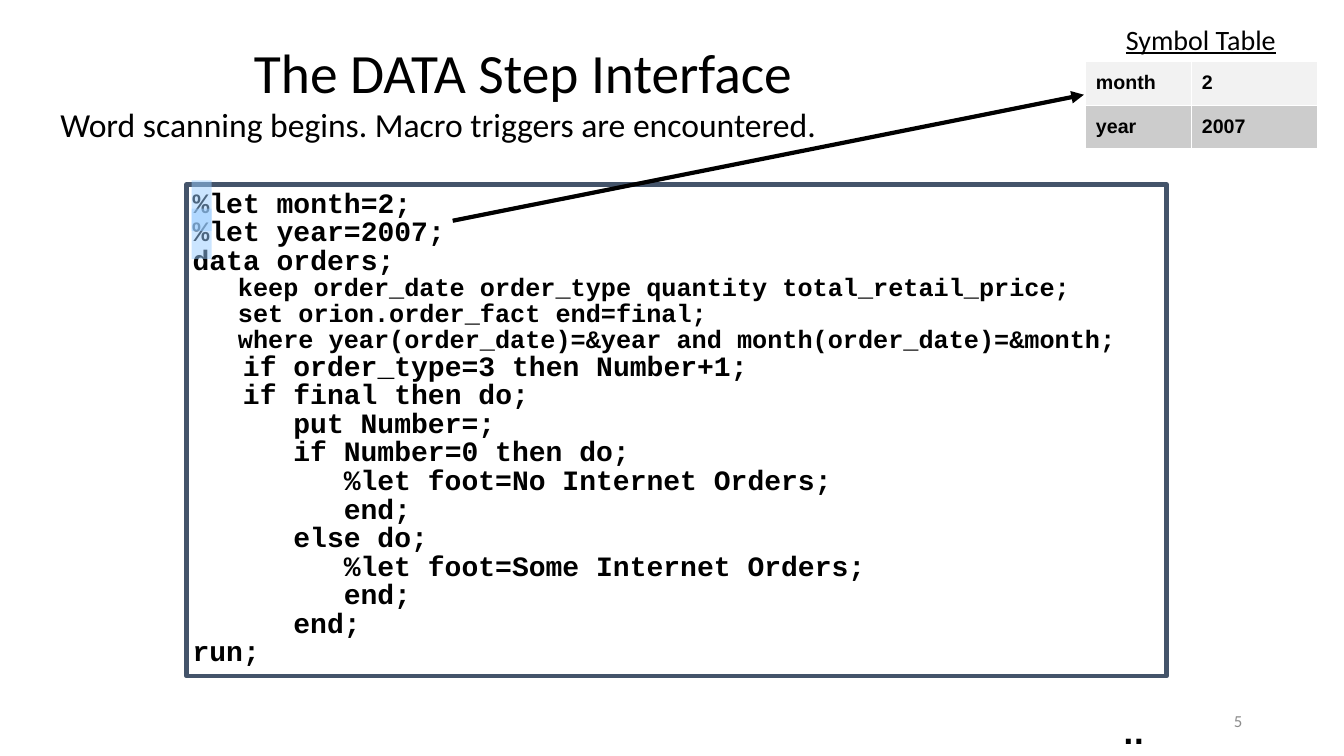
from dataclasses import dataclass

from lxml.etree import SubElement
from pptx import Presentation
from pptx.dml.color import RGBColor
from pptx.enum.shapes import MSO_CONNECTOR, MSO_SHAPE
from pptx.enum.text import MSO_ANCHOR, MSO_AUTO_SIZE, PP_ALIGN
from pptx.oxml.ns import qn
from pptx.util import Inches, Pt

COLORS = {
    "black": "000000",
    "white": "FFFFFF",
    "page_number": "8C8C8C",
    "frame": "44546A",
    "highlight": "99CCFF",
    "light_row": "F2F2F2",
    "dark_row": "CCCCCC",
}
COURIER_ADVANCE = 0.6  # character width as a share of the font size


@dataclass
class Label:
    text: str
    left: float
    top: float
    width: float
    height: float
    size: float
    font: str = "Calibri"
    color: str = "black"
    bold: bool = False
    underline: bool = False
    align: PP_ALIGN = PP_ALIGN.LEFT
    anchor: MSO_ANCHOR = MSO_ANCHOR.TOP
    wrap: bool = True
    line_spacing: float = 1.0


@dataclass
class CodeLine:
    text: str
    indent: int = 0
    size: int = 20


LABELS = [
    Label("The DATA Step Interface", 2.42, 0.5, 7.54, 0.5, 39.6,
          anchor=MSO_ANCHOR.MIDDLE, line_spacing=0.9),
    Label("Word scanning begins. Macro triggers are encountered.",
          0.5, 0.98, 8.73, 0.5, 24),
    Label("Symbol Table", 10.75, 0.17, 2.32, 0.43, 20,
          underline=True, align=PP_ALIGN.CENTER),
    Label("5", 9.42, 6.95, 3, 0.4, 12, color="page_number",
          align=PP_ALIGN.RIGHT, anchor=MSO_ANCHOR.MIDDLE),
    Label("...", 11.04, 7.06, 0.5, 0.43, 20, font="DejaVu Sans",
          bold=True, wrap=False),
]

CODE = [
    CodeLine("%let month=2;"),
    CodeLine("%let year=2007;"),
    CodeLine("data orders;"),
    CodeLine("keep order_date order_type quantity total_retail_price;", 3, 18),
    CodeLine("set orion.order_fact end=final;", 3, 18),
    CodeLine("where year(order_date)=&year and month(order_date)=&month;", 3, 18),
    CodeLine("if order_type=3 then Number+1;", 3),
    CodeLine("if final then do;", 3),
    CodeLine("put Number=;", 6),
    CodeLine("if Number=0 then do;", 6),
    CodeLine("%let foot=No Internet Orders;", 9),
    CodeLine("end;", 9),
    CodeLine("else do;", 6),
    CodeLine("%let foot=Some Internet Orders;", 9),
    CodeLine("end;", 9),
    CodeLine("end;", 6),
    CodeLine("run;"),
]

SYMBOLS = [("month", "2"), ("year", "2007")]
HIGHLIGHT_TOPS = [1.79, 2.07]


def rgb(name: str) -> RGBColor:
    return RGBColor.from_string(COLORS[name])


def write_text(para, text: str, *, size: float, font: str, color: str = "black",
               bold: bool = False, underline: bool = False) -> None:
    span = para.add_run()
    span.text = text
    span.font.size = Pt(size)
    span.font.name = font
    span.font.bold = bold
    span.font.underline = underline
    span.font.color.rgb = rgb(color)


def set_margins(target, margin: float) -> None:
    target.margin_left = target.margin_right = Inches(margin)
    target.margin_top = target.margin_bottom = Inches(margin)


def add_label(page, label: Label) -> None:
    box = page.shapes.add_textbox(Inches(label.left), Inches(label.top),
                                  Inches(label.width), Inches(label.height))
    frame = box.text_frame
    frame.word_wrap = label.wrap
    frame.vertical_anchor = label.anchor
    para = frame.paragraphs[0]
    para.alignment = label.align
    para.line_spacing = label.line_spacing
    write_text(para, label.text, size=label.size, font=label.font,
               color=label.color, bold=label.bold, underline=label.underline)


def add_rectangle(page, left: float, top: float, width: float, height: float,
                  fill: str):
    box = page.shapes.add_shape(MSO_SHAPE.RECTANGLE, Inches(left), Inches(top),
                                Inches(width), Inches(height))
    box.shadow.inherit = False
    box.fill.solid()
    box.fill.fore_color.rgb = rgb(fill)
    box.line.fill.background()
    return box


def add_code(page) -> None:
    box = add_rectangle(page, 1.85, 1.83, 9.72, 4.88, "white")
    box.line.color.rgb = rgb("frame")
    box.line.width = Pt(3)
    frame = box.text_frame
    frame.word_wrap = True
    frame.auto_size = MSO_AUTO_SIZE.SHAPE_TO_FIT_TEXT
    frame.vertical_anchor = MSO_ANCHOR.TOP
    set_margins(frame, 0.06)
    for index, line in enumerate(CODE):
        para = frame.add_paragraph() if index else frame.paragraphs[0]
        para.alignment = PP_ALIGN.LEFT
        para.line_spacing = 0.85
        indent = Pt(line.indent * line.size * COURIER_ADVANCE)
        para._p.get_or_add_pPr().set("marL", str(int(indent)))
        write_text(para, line.text, size=line.size, font="Courier New", bold=True)


def add_arrow(page) -> None:
    arrow = page.shapes.add_connector(MSO_CONNECTOR.STRAIGHT, Inches(4.49),
                                      Inches(2.19), Inches(10.75), Inches(0.94))
    arrow.line.color.rgb = rgb("black")
    arrow.line.width = Pt(3)
    SubElement(arrow.line._get_or_add_ln(), qn("a:tailEnd"), type="triangle")
    SubElement(arrow._element.spPr, qn("a:effectLst"))


def add_highlight(page, top: float) -> None:
    box = add_rectangle(page, 1.9, top, 0.2, 0.5, "highlight")
    color = box._element.spPr.find(qn("a:solidFill")).find(qn("a:srgbClr"))
    SubElement(color, qn("a:alpha"), val="50000")


def add_borders(cell) -> None:
    properties = cell._tc.get_or_add_tcPr()
    for index, side in enumerate(("lnL", "lnR", "lnT", "lnB")):
        border = SubElement(properties, qn(f"a:{side}"), w=str(int(Pt(1))))
        fill = SubElement(border, qn("a:solidFill"))
        SubElement(fill, qn("a:srgbClr"), val=COLORS["white"])
        properties.insert(index, border)


def add_symbol_table(page) -> None:
    table = page.shapes.add_table(len(SYMBOLS), 2, Inches(10.77), Inches(0.61),
                                  Inches(2.3), Inches(0.86)).table
    for column, width in zip(table.columns, (1.05, 1.25)):
        column.width = Inches(width)
    for row, (entry, fill) in enumerate(zip(SYMBOLS, ("light_row", "dark_row"))):
        for column, text in enumerate(entry):
            cell = table.cell(row, column)
            set_margins(cell, 0.1)
            cell.fill.solid()
            cell.fill.fore_color.rgb = rgb(fill)
            add_borders(cell)
            write_text(cell.text_frame.paragraphs[0], text, size=14,
                       font="Arial", bold=True)


def main() -> None:
    deck = Presentation()
    deck.slide_width, deck.slide_height = Inches(13.33), Inches(7.5)
    page = deck.slides.add_slide(deck.slide_layouts[6])
    add_code(page)
    add_arrow(page)
    for top in HIGHLIGHT_TOPS:
        add_highlight(page, top)
    for label in LABELS:
        add_label(page, label)
    add_symbol_table(page)
    deck.save("out.pptx")


if __name__ == "__main__":
    main()
